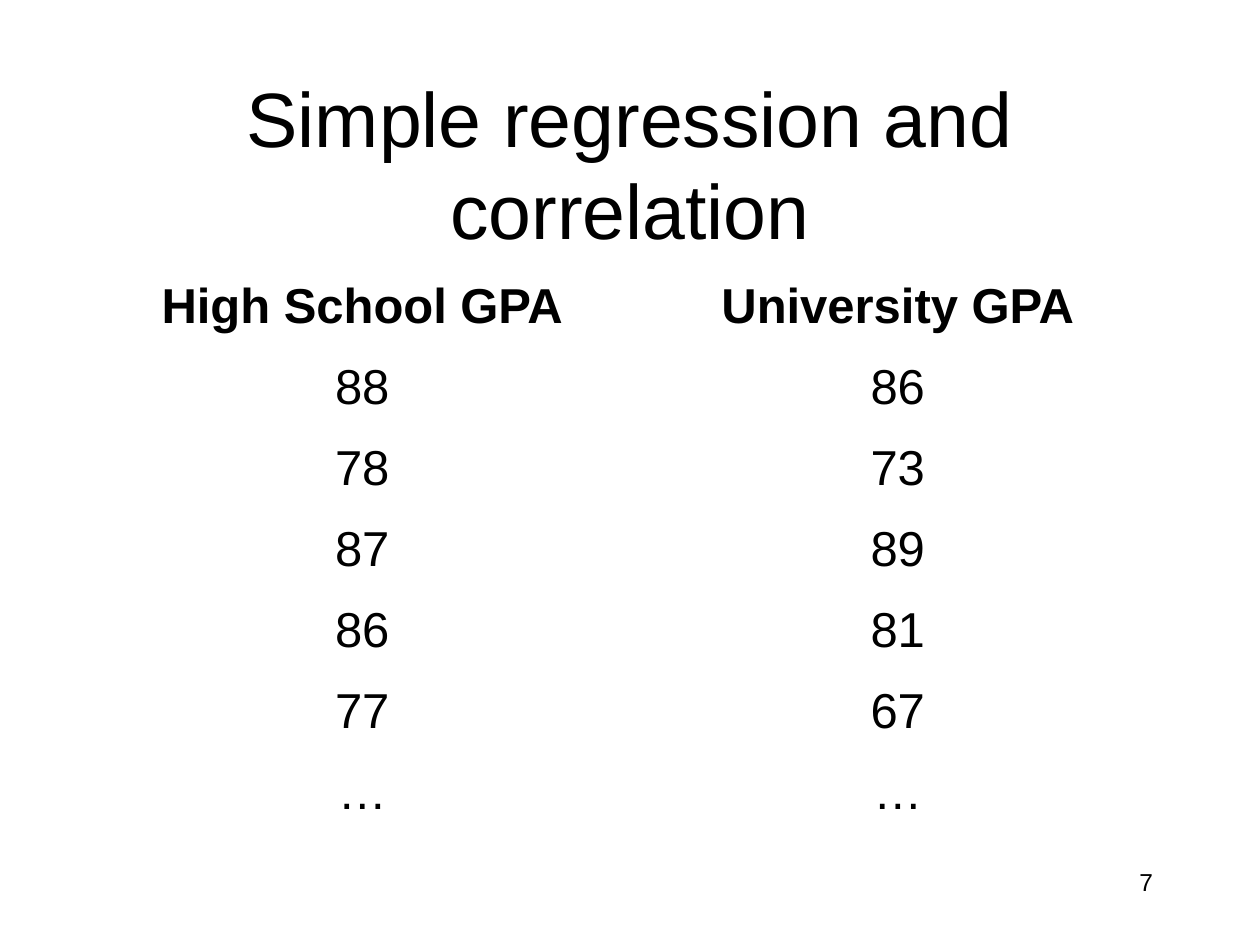
from dataclasses import dataclass

from pptx import Presentation
from pptx.dml.color import RGBColor
from pptx.enum import text
from pptx.util import Pt


@dataclass(frozen=True)
class Theme:
    """Colours and type sizes of the slide."""
    font: str = "Arial"
    ink: RGBColor = RGBColor(0, 0, 0)
    paper: RGBColor = RGBColor(255, 255, 255)
    title_size: int = 44
    table_size: int = 28
    number_size: int = 14


THEME = Theme()
TITLE_BOX = (54, 48, 612, 90)
TABLE_BOX = (54, 156, 612, 324)
NUMBER_BOX = (516, 492, 150, 36)
GRADES = [
    ("High School GPA", "University GPA"),
    ("88", "86"),
    ("78", "73"),
    ("87", "89"),
    ("86", "81"),
    ("77", "67"),
    ("…", "…"),
]


def write(frame, words, size, alignment, bold=False):
    """Put one formatted paragraph in a text frame."""
    frame.word_wrap = True
    paragraph = frame.paragraphs[0]
    paragraph.text = words
    paragraph.alignment = alignment
    font = paragraph.font
    font.name, font.size, font.bold = THEME.font, Pt(size), bold
    font.color.rgb = THEME.ink


def place_title(slide, box, words):
    """Move the title placeholder to the box and fill it."""
    title = slide.shapes.title
    title.left, title.top, title.width, title.height = map(Pt, box)
    frame = title.text_frame
    write(frame, words, THEME.title_size, text.PP_ALIGN.CENTER)
    frame.auto_size = text.MSO_AUTO_SIZE.NONE
    frame.vertical_anchor = text.MSO_ANCHOR.MIDDLE


def place_table(slide, box, rows):
    """Spread an unfilled table with a bold first row evenly over the box."""
    table = slide.shapes.add_table(len(rows), len(rows[0]), *map(Pt, box)).table
    table.first_row = table.horz_banding = False
    for row_index, row in enumerate(rows):
        for column_index, words in enumerate(row):
            cell = table.cell(row_index, column_index)
            cell.fill.background()
            write(cell.text_frame, words, THEME.table_size,
                  text.PP_ALIGN.CENTER, bold=row_index == 0)


def place_number(slide, box, number):
    """Write the slide number at the right of the box."""
    shape = slide.shapes.add_textbox(*map(Pt, box))
    write(shape.text_frame, number, THEME.number_size, text.PP_ALIGN.RIGHT)


def main():
    """Build and save the slide."""
    presentation = Presentation()
    presentation.slide_width, presentation.slide_height = Pt(720), Pt(540)
    slide = presentation.slides.add_slide(presentation.slide_layouts[5])
    slide.background.fill.solid()
    slide.background.fill.fore_color.rgb = THEME.paper
    place_title(slide, TITLE_BOX, "Simple regression and correlation")
    place_table(slide, TABLE_BOX, GRADES)
    place_number(slide, NUMBER_BOX, "7")
    presentation.save("out.pptx")


if __name__ == "__main__":
    main()
